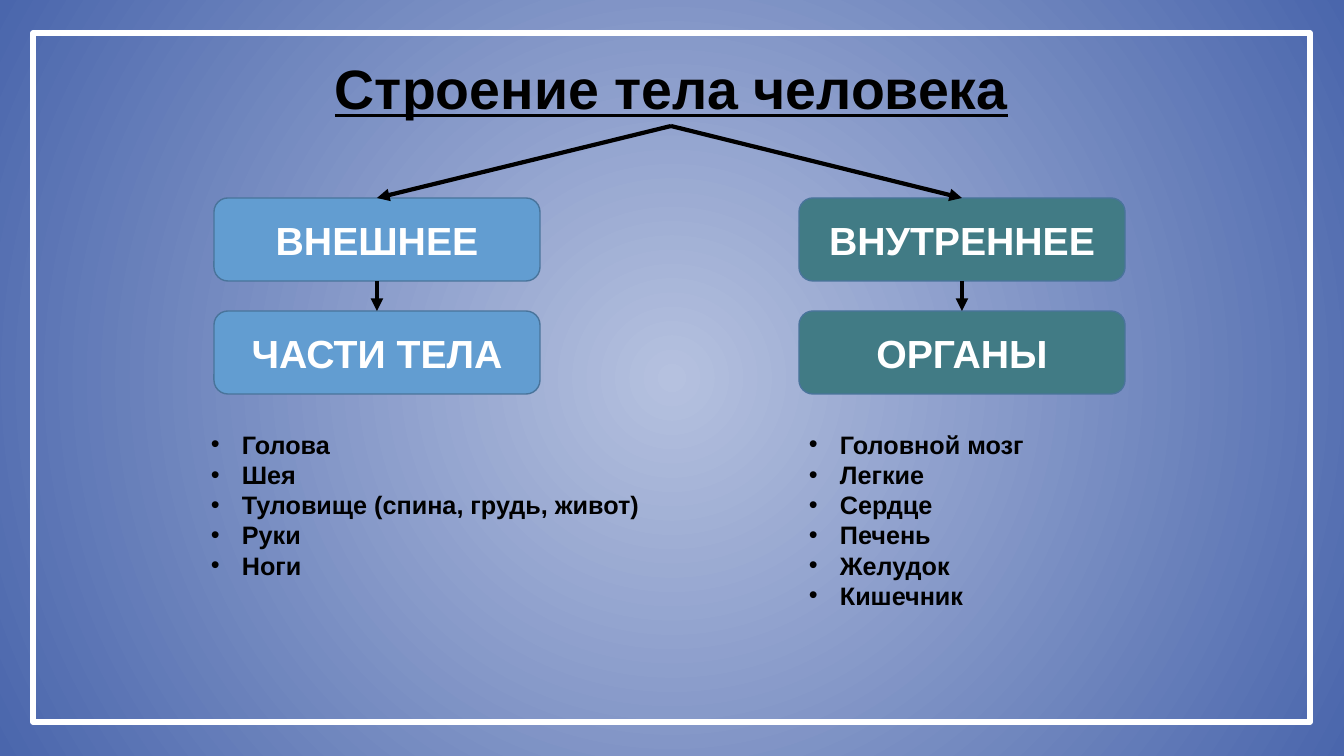
from lxml import etree
from pptx import Presentation
from pptx import util as u
from pptx.dml.color import RGBColor
from pptx.enum import shapes, text
from pptx.oxml import ns

COLORS = {
    "center": "B5C1DF",
    "edge": "4A66AC",
    "frame": "FFFFFF",
    "ink": "000000",
    "outer": "629DD1",
    "inner": "417B85",
    "border": "49749B",
    "label": "FFFFFF",
}


class Board:
    EMU_PER_PX = 914400 / 100.8
    FONT = "Arial"

    def __init__(self, width, height):
        self.deck = Presentation()
        self.deck.slide_width, self.deck.slide_height = self.px(width, height)
        self.page = self.deck.slides.add_slide(self.deck.slide_layouts[6])

    def px(self, *lengths):
        return [u.Emu(round(length * self.EMU_PER_PX)) for length in lengths]

    def color(self, name):
        return RGBColor.from_string(COLORS[name])

    def child(self, parent, tag, **attributes):
        return etree.SubElement(parent, ns.qn(tag), attributes)

    def background(self, center, edge):
        fill = self.page.background.fill
        fill.gradient()
        for stop, name in zip(fill.gradient_stops, (center, edge)):
            stop.color.rgb = self.color(name)
        gradient = self.page.element.xpath(".//p:bgPr/a:gradFill")[0]
        for linear in gradient.findall(ns.qn("a:lin")):
            gradient.remove(linear)
        circle = self.child(gradient, "a:path", path="circle")
        self.child(circle, "a:fillToRect", l="50000", t="50000", r="50000", b="50000")

    def frame(self, left, top, width, height):
        box = self.page.shapes.add_shape(
            shapes.MSO_SHAPE.RECTANGLE, *self.px(left, top, width, height))
        box.shadow.inherit = False
        box.fill.background()
        box.line.color.rgb = self.color("frame")
        box.line.width = u.Pt(4)

    def style(self, para, size, color, underline=None):
        for span in para.runs:
            span.font.name = self.FONT
            span.font.size = u.Pt(size)
            span.font.bold = True
            span.font.underline = underline
            span.font.color.rgb = self.color(color)

    def textbox(self, left, top, width, height, wording):
        box = self.page.shapes.add_textbox(*self.px(left, top, width, height))
        box.text_frame.word_wrap = True
        box.text_frame.text = wording
        return box.text_frame

    def title(self, left, top, width, height, wording):
        frame = self.textbox(left, top, width, height, wording)
        frame.vertical_anchor = text.MSO_ANCHOR.BOTTOM
        para = frame.paragraphs[0]
        para.alignment = text.PP_ALIGN.CENTER
        para.line_spacing = 0.9
        self.style(para, 39.6, "ink", underline=True)

    def card(self, left, top, width, height, wording, color):
        box = self.page.shapes.add_shape(
            shapes.MSO_SHAPE.ROUNDED_RECTANGLE, *self.px(left, top, width, height))
        box.shadow.inherit = False
        box.fill.solid()
        box.fill.fore_color.rgb = self.color(color)
        box.line.color.rgb = self.color("border")
        box.line.width = u.Pt(1)
        box.text_frame.word_wrap = True
        box.text_frame.vertical_anchor = text.MSO_ANCHOR.MIDDLE
        box.text_frame.text = wording
        para = box.text_frame.paragraphs[0]
        para.alignment = text.PP_ALIGN.CENTER
        self.style(para, 28, "label")

    def bullets(self, left, top, width, height, items):
        frame = self.textbox(left, top, width, height, "\n".join(items))
        indent = self.px(31)[0]
        for para in frame.paragraphs:
            para.line_spacing = u.Pt(21.6)
            self.style(para, 18, "ink")
            properties = para._p.get_or_add_pPr()
            properties.set("marL", str(indent))
            properties.set("indent", str(-indent))
            self.child(properties, "a:buFont", typeface=self.FONT)
            self.child(properties, "a:buChar", char="•")

    def arrow(self, start_x, start_y, end_x, end_y):
        connector = self.page.shapes.add_connector(
            shapes.MSO_CONNECTOR.STRAIGHT, *self.px(start_x, start_y, end_x, end_y))
        connector.line.color.rgb = self.color("ink")
        connector.line.width = u.Pt(3)
        self.child(connector.line._get_or_add_ln(), "a:tailEnd", type="triangle")
        self.child(connector._element.spPr, "a:effectLst")


def main():
    card_width, card_height = 326, 83
    kind_top, part_top, list_top = 198, 311, 424
    fork_x, fork_y = 671, 126
    columns = [
        (214, "outer", "ВНЕШНЕЕ", "ЧАСТИ ТЕЛА", (201, 491, 163),
         ["Голова", "Шея", "Туловище (спина, грудь, живот)", "Руки", "Ноги"]),
        (799, "inner", "ВНУТРЕННЕЕ", "ОРГАНЫ", (799, 326, 194),
         ["Головной мозг", "Легкие", "Сердце", "Печень", "Желудок", "Кишечник"]),
    ]

    board = Board(1344, 756)
    board.background("center", "edge")
    board.frame(33, 33, 1277, 689)
    board.title(36, 51, 1271, 75, "Строение тела человека")
    for left, color, kind, part, (list_left, list_width, list_height), items in columns:
        middle = left + card_width // 2
        board.card(left, kind_top, card_width, card_height, kind, color)
        board.card(left, part_top, card_width, card_height, part, color)
        board.arrow(fork_x, fork_y, middle, kind_top)
        board.arrow(middle, kind_top + card_height, middle, part_top)
        board.bullets(list_left, list_top, list_width, list_height, items)
    board.deck.save("out.pptx")


if __name__ == "__main__":
    main()
